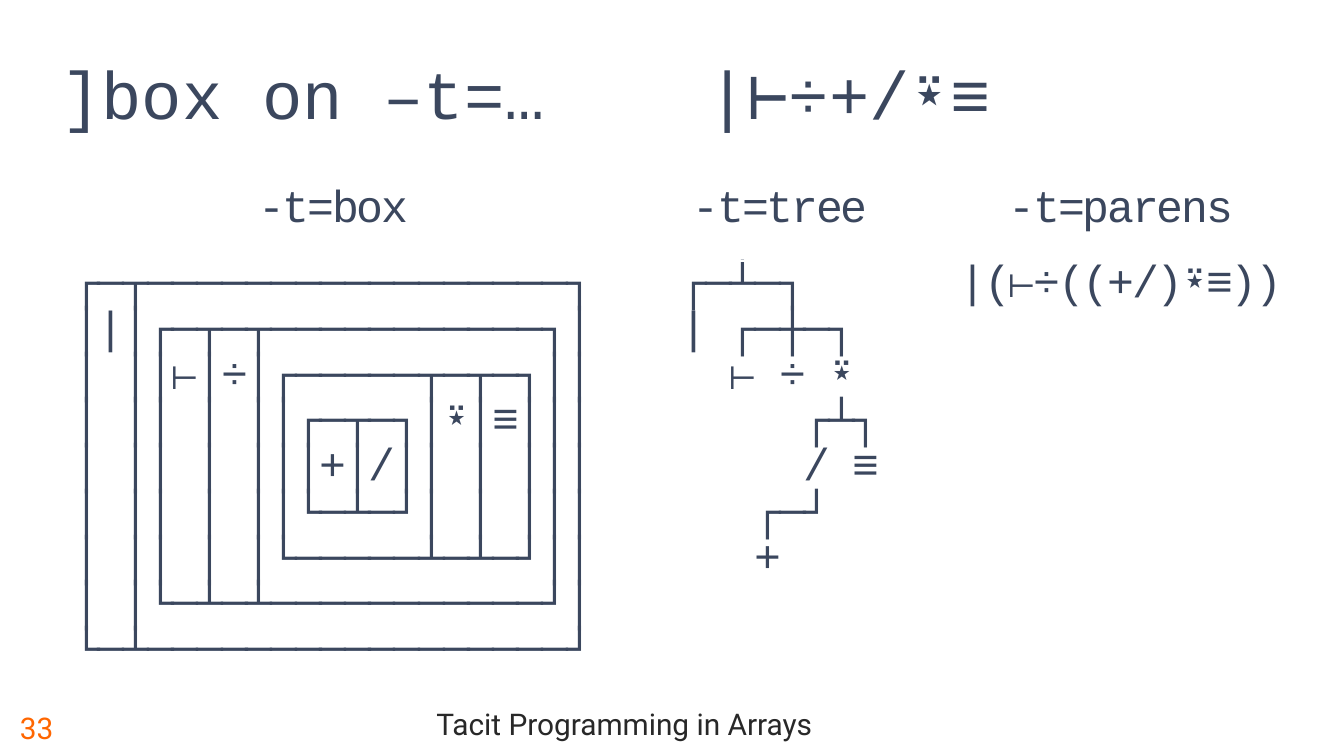
from dataclasses import dataclass

from lxml.etree import SubElement
from pptx import Presentation
from pptx.dml.color import RGBColor
from pptx.enum.text import MSO_ANCHOR as Anchor, PP_ALIGN as Align
from pptx.oxml.ns import qn
from pptx.util import Pt

CODE_FONT, FOOTER_FONT = "Courier New", "Roboto"
SLATE, CHARCOAL, ORANGE = "3B475E", "282828", "FF6600"


@dataclass
class Display:
    """One output style of the box command: a heading above its drawing."""
    option: str
    width: float
    drawing: str
    align: Align = Align.CENTER
    indent: float = 0


@dataclass
class Footer:
    text: str
    left: float
    width: float
    color: str
    align: Align
    line_spacing: float


BOX = """\
┌─┬─────────────────┐
│|│┌─┬─┬───────────┐│
│ ││⊢│÷│┌─────┬─┬─┐││
│ ││ │ ││┌─┬─┐│⍣│≡│││
│ ││ │ │││+│/││ │ │││
│ ││ │ ││└─┴─┘│ │ │││
│ ││ │ │└─────┴─┴─┘││
│ │└─┴─┴───────────┘│
└─┴─────────────────┘"""

TREE = """\
 ┌─┴─┐
 | ┌─┼─┐
   ⊢ ÷ ⍣
      ┌┴┐
      / ≡
    ┌─┘
    +"""

DISPLAYS = [
    Display("-t=box", 306, BOX),
    Display("-t=tree", 173, TREE, Align.LEFT, 19.8),
    Display("-t=parens", 192, "|(⊢÷((+/)⍣≡))"),
]
FOOTERS = [
    Footer("Tacit Programming in Arrays", 56, 557, CHARCOAL, Align.CENTER, 0.8),
    Footer("33", 3.6, 52.6, ORANGE, Align.LEFT, 1),
]


def format_font(font, name: str, size: float, color: str) -> None:
    font.name = name
    font.size = Pt(size)
    font.bold = False
    font.color.rgb = RGBColor.from_string(color)


def fill_cell(cell, text: str, align: Align, indent: float = 0) -> None:
    cell.fill.background()
    cell.margin_left = Pt(indent)
    cell.margin_right = cell.margin_top = cell.margin_bottom = 0
    cell.text_frame.text = text
    for paragraph in cell.text_frame.paragraphs:
        paragraph.alignment = align
        paragraph.line_spacing = 0.9
        for run in paragraph.runs:
            format_font(run.font, CODE_FONT, 24, SLATE)
            run._r.get_or_add_rPr().set("spc", "-120")


def add_title(slide, text: str, tab_position: float) -> None:
    title = slide.shapes.title
    title.left, title.top, title.width, title.height = Pt(25.5), Pt(21.3), Pt(512.6), Pt(54)
    frame = title.text_frame
    frame.vertical_anchor = Anchor.BOTTOM
    frame.text = text
    paragraph = frame.paragraphs[0]
    paragraph.alignment = Align.LEFT
    paragraph.line_spacing = 0.9
    tabs = SubElement(paragraph._p.get_or_add_pPr(), qn("a:tabLst"))
    SubElement(tabs, qn("a:tab"), pos=str(Pt(tab_position)), algn="r")
    format_font(paragraph.runs[0].font, CODE_FONT, 36, SLATE)


def add_displays(slide, displays: list[Display]) -> None:
    width = sum(display.width for display in displays)
    frame = slide.shapes.add_table(2, len(displays), Pt(25.5), Pt(99.5), Pt(width), Pt(249))
    table = frame.table
    table.first_row = table.horz_banding = False
    table.rows[0].height, table.rows[1].height = Pt(40.3), Pt(208.7)
    for column, display in enumerate(displays):
        table.columns[column].width = Pt(display.width)
        fill_cell(table.cell(0, column), display.option, Align.CENTER)
        fill_cell(table.cell(1, column), display.drawing, display.align, display.indent)


def add_footer(slide, footer: Footer) -> None:
    box = slide.shapes.add_textbox(Pt(footer.left), Pt(373.7), Pt(footer.width), Pt(31.7))
    frame = box.text_frame
    frame.word_wrap = True
    frame.vertical_anchor = Anchor.MIDDLE
    frame.text = footer.text
    paragraph = frame.paragraphs[0]
    paragraph.alignment = footer.align
    paragraph.line_spacing = footer.line_spacing
    format_font(paragraph.runs[0].font, FOOTER_FONT, 16, footer.color)


def main() -> None:
    presentation = Presentation()
    presentation.slide_width, presentation.slide_height = Pt(720), Pt(405)
    slide = presentation.slides.add_slide(presentation.slide_layouts[5])

    # Page footer and number
    for footer in FOOTERS:
        add_footer(slide, footer)

    # Output styles side by side
    add_displays(slide, DISPLAYS)

    # Command on the left, expression at the right tab
    add_title(slide, "]box on –t=…\t|⊢÷+/⍣≡", 498)

    presentation.save("out.pptx")


if __name__ == "__main__":
    main()
